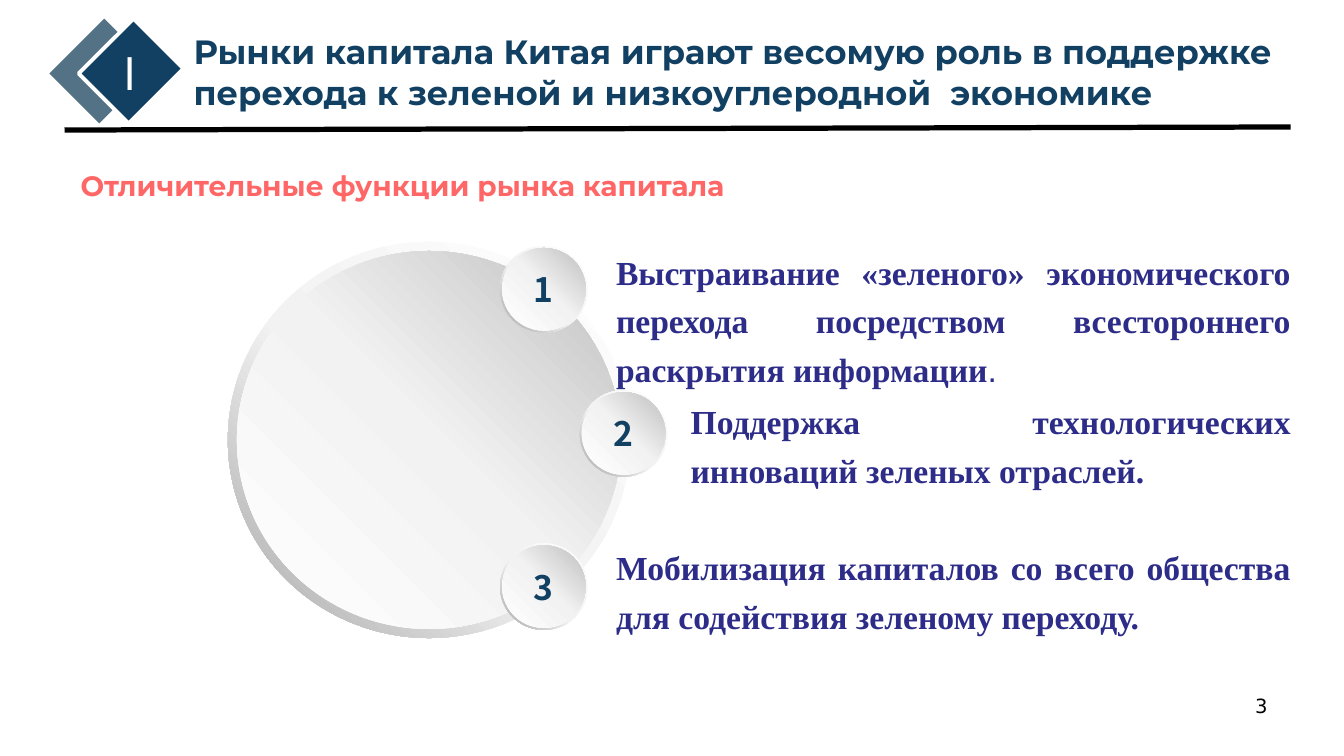
from copy import deepcopy

from pptx import Presentation
from pptx.dml.color import RGBColor
from pptx.enum.shapes import MSO_CONNECTOR, MSO_SHAPE
from pptx.enum.text import MSO_ANCHOR, MSO_AUTO_SIZE, PP_ALIGN
from pptx.oxml.ns import qn
from pptx.util import Inches, Pt

DONUT, OVAL, ROUND_RECT = MSO_SHAPE.DONUT, MSO_SHAPE.OVAL, MSO_SHAPE.ROUNDED_RECTANGLE
STRAIGHT = MSO_CONNECTOR.STRAIGHT
TOP, MIDDLE = MSO_ANCHOR.TOP, MSO_ANCHOR.MIDDLE
LEFT, CENTER, RIGHT, JUSTIFY = PP_ALIGN.LEFT, PP_ALIGN.CENTER, PP_ALIGN.RIGHT, PP_ALIGN.JUSTIFY
NO_FIT = MSO_AUTO_SIZE.NONE

NAVY, SLATE, CORAL, INDIGO = "124062", "537285", "FF6666", "2D2D89"
WHITE, BLACK = "FFFFFF", "000000"
RING_STOPS = [(0, WHITE), (0.55, "F2F2F2"), (1, "A6A6A6")]
DISC_STOPS = [(0, WHITE), (0.51, "F2F2F2"), (1, "BFBFBF")]

TITLE = ["Рынки капитала Китая играют весомую роль в поддержке",
         "перехода к зеленой и низкоуглеродной  экономике"]
SUBTITLE = "Отличительные функции рынка капитала"
# Badge left and top, text left and top, text, closing mark in the lighter font
FUNCTIONS = [
    (4.96, 2.44, 6.11, 2.42, "Выстраивание «зеленого» экономического перехода "
     "посредством всестороннего раскрытия информации", "."),
    (5.75, 3.87, 6.85, 3.9, "Поддержка технологических инноваций зеленых отраслей.", ""),
    (4.96, 5.39, 6.11, 5.35, "Мобилизация капиталов со всего общества "
     "для содействия зеленому переходу.", ""),
]
TEXT_RIGHT = 12.8


def rgb(color):
    return RGBColor.from_string(color)


def inches(*lengths):
    return [Inches(length) for length in lengths]


def add_run(paragraph, text, size, font, color, bold=False):
    run = paragraph.add_run()
    run.text = text
    run.font.size, run.font.name, run.font.bold = Pt(size), font, bold
    run.font.color.rgb = rgb(color)


def set_frame(frame, wrap=True, anchor=TOP, inset=None):
    frame.auto_size = NO_FIT
    frame.word_wrap, frame.vertical_anchor = wrap, anchor
    if inset is not None:
        frame.margin_left = frame.margin_right = Inches(inset)
        frame.margin_top = frame.margin_bottom = Inches(inset)
    return frame


def move(shape, box):
    shape.left, shape.top, shape.width, shape.height = inches(*box)


def add_plain_shape(shapes, kind, box):
    shape = shapes.add_shape(kind, *inches(*box))
    shape.shadow.inherit = False
    shape.line.fill.background()
    return shape


def fill_gradient(shape, stops, angle):
    shape.fill.gradient()
    shape.fill.gradient_angle = angle
    stop_list = shape._element.spPr.find(qn("a:gradFill")).find(qn("a:gsLst"))
    stop_list.insert(1, deepcopy(stop_list[0]))
    for stop, (position, color) in zip(shape.fill.gradient_stops, stops):
        stop.position = position
        stop.color.rgb = rgb(color)


def add_header(slide, left, top):
    """Section emblem, two-line title and rule."""
    # Overlapping diamonds
    for offset, color in ((0, SLATE), (0.29, NAVY)):
        diamond = add_plain_shape(slide.shapes, ROUND_RECT, (left + offset, top, 0.7, 0.77))
        diamond.adjustments[0] = 0
        diamond.rotation = 45
        diamond.fill.solid()
        diamond.fill.fore_color.rgb = rgb(color)
    diamond.line.color.rgb = rgb(WHITE)
    diamond.line.width = Pt(2.75)

    # Title
    title = slide.shapes.title
    move(title, (left + 1.16, top - 0.06, 11.19, 0.91))
    frame = set_frame(title.text_frame, wrap=False)
    for index, line in enumerate(TITLE):
        paragraph = frame.add_paragraph() if index else frame.paragraphs[0]
        paragraph.alignment = LEFT
        add_run(paragraph, line, 24, "Montserrat", NAVY, True)

    # Section numeral
    numeral = slide.shapes.add_textbox(*inches(left + 0.47, top + 0.08, 0.33, 0.64))
    frame = set_frame(numeral.text_frame, wrap=False)
    add_run(frame.paragraphs[0], "I", 32, "Noto Sans CJK SC", WHITE)

    # Rule
    rule = slide.shapes.add_connector(
        STRAIGHT, *inches(left - 0.02, top + 0.97, TEXT_RIGHT, top + 0.94))
    rule.line.color.rgb = rgb(BLACK)
    rule.line.width = Pt(3.75)
    properties = rule._element.spPr
    properties.append(properties.makeelement(qn("a:effectLst"), {}))


def add_subtitle(slide, box):
    subtitle = slide.placeholders[1]
    move(subtitle, box)
    paragraph = set_frame(subtitle.text_frame, anchor=MIDDLE).paragraphs[0]
    properties = paragraph._p.get_or_add_pPr()
    properties.set("marL", "0")
    properties.set("indent", "0")
    properties.append(properties.makeelement(qn("a:buNone"), {}))
    paragraph.space_before = Pt(0)
    add_run(paragraph, SUBTITLE, 20, "Montserrat", CORAL, True)


def add_dial(shapes, box, rim):
    """Raised disc: a shaded ring with a disc inset by the rim width."""
    left, top, width, height = box
    ring = add_plain_shape(shapes, DONUT, box)
    ring.adjustments[0] = 0.049
    fill_gradient(ring, RING_STOPS, 225)
    disc = add_plain_shape(
        shapes, OVAL, (left + rim, top + rim, width - 2 * rim, height - 2 * rim))
    fill_gradient(disc, DISC_STOPS, 45)
    return disc


def add_functions(slide, dial_box):
    """Large dial with numbered badges and a statement beside each."""
    shapes = slide.shapes.add_group_shape().shapes
    add_dial(shapes, dial_box, 0.09)
    # Numbered badges
    for number, (left, top, *_) in enumerate(FUNCTIONS, 1):
        badge = add_dial(shapes, (left, top, 0.87, 0.86), 0.02)
        paragraph = set_frame(badge.text_frame, anchor=MIDDLE, inset=0).paragraphs[0]
        paragraph.alignment = CENTER
        add_run(paragraph, str(number), 24, "Noto Sans CJK SC", NAVY, True)
    # Statements
    for _, _, left, top, text, mark in FUNCTIONS:
        statement = shapes.add_textbox(*inches(left, top, TEXT_RIGHT - left, 0.93))
        paragraph = set_frame(statement.text_frame, inset=0).paragraphs[0]
        paragraph.alignment = JUSTIFY
        paragraph.line_spacing = 1.2
        add_run(paragraph, text, 24, "Times New Roman", INDIGO, True)
        if mark:
            add_run(paragraph, mark, 24, "Arial", INDIGO)


def add_page_number(slide, box):
    page_number = slide.shapes.add_textbox(*inches(*box))
    paragraph = set_frame(page_number.text_frame).paragraphs[0]
    paragraph.alignment = RIGHT
    add_run(paragraph, "3", 14, "DejaVu Sans", BLACK)


def main():
    deck = Presentation()
    deck.slide_width, deck.slide_height = inches(13.33, 7.5)
    slide = deck.slides.add_slide(deck.slide_layouts[1])
    add_header(slide, 0.66, 0.32)
    add_page_number(slide, (9.56, 6.83, 3.11, 0.52))
    add_subtitle(slide, (0.7, 1.46, 8.86, 0.75))
    add_functions(slide, (2.26, 2.4, 3.99, 3.93))
    deck.save("out.pptx")


if __name__ == "__main__":
    main()
